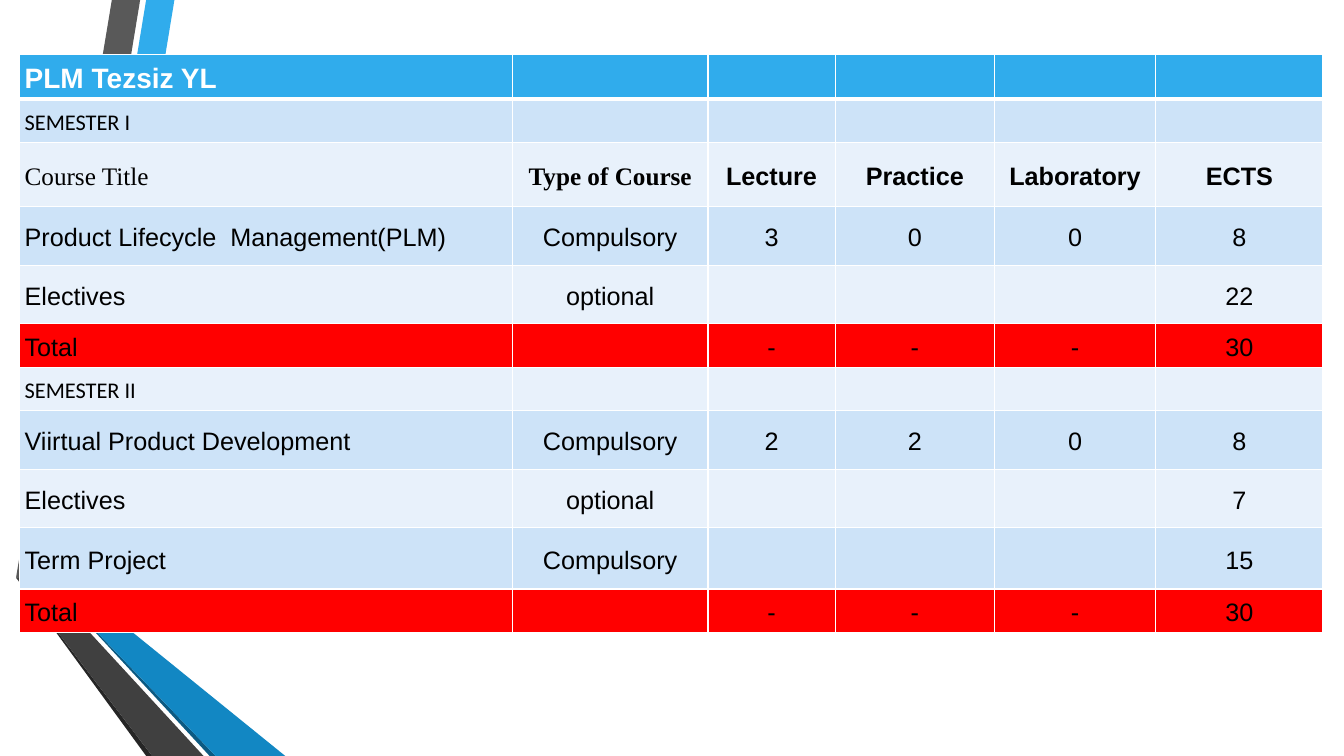
import pptx
import pptx.dml.color
import pptx.enum.text
import pptx.oxml
import pptx.oxml.ns
import pptx.util
from pptx.util import Pt

COLORS = {
    "sky": "30ACEC", "grey": "595959", "black": "000000", "navy": "0C5A82",
    "blue": "1287C3", "charcoal": "404040", "shadow": "262626",
    "band": "CDE3F8", "pale": "E8F1FB", "total": "FF0000", "white": "FFFFFF",
}

# Ribbon colour and outline corners in points
RIBBONS = [
    ("sky", [(36, 416.2), (55.4, 419.8), (124.6, 0), (104.4, 0)]),
    ("grey", [(100.1, 0), (79.9, 0), (11.5, 412.6), (31.7, 415.4)]),
    ("shadow", [(11.5, 412.6), (104.4, 540), (108.7, 540)]),
    ("navy", [(36, 416.9), (149.8, 540), (154.1, 540)]),
    ("blue", [(36, 416.9), (154.1, 540), (203.8, 540), (55.4, 419.8), (36, 416.2)]),
    ("charcoal", [(145.4, 540), (34.6, 419.8), (31, 416.2), (31.7, 415.4),
                  (11.5, 412.6), (108.7, 540)]),
]

COLUMN_WIDTHS = [352, 139.7, 90.9, 113.8, 115.2, 119.5]
ROW_HEIGHTS = {"header": 31.7, "semester": 31, "titles": 46.1,
               "course": 41.8, "project": 43.9, "total": 31}
ROWS = [
    ("header", ["PLM Tezsiz YL", "", "", "", "", ""]),
    ("semester", ["SEMESTER I", "", "", "", "", ""]),
    ("titles", ["Course Title", "Type of Course", "Lecture", "Practice",
                "Laboratory", "ECTS"]),
    ("course", ["Product Lifecycle  Management(PLM)", "Compulsory", "3", "0", "0", "8"]),
    ("course", ["Electives", "optional", "", "", "", "22"]),
    ("total", ["Total", "", "-", "-", "-", "30"]),
    ("semester", ["SEMESTER II", "", "", "", "", ""]),
    ("course", ["Viirtual Product Development", "Compulsory", "2", "2", "0", "8"]),
    ("course", ["Electives", "optional", "", "", "", "7"]),
    ("project", ["Term Project", "Compulsory", "", "", "", "15"]),
    ("total", ["Total", "", "-", "-", "-", "30"]),
]


def rgb(name):
    return pptx.dml.color.RGBColor.from_string(COLORS[name])


def add_ribbon(slide, color, corners):
    points = [(Pt(x), Pt(y)) for x, y in corners]
    builder = slide.shapes.build_freeform(*points[0])
    builder.add_line_segments(points[1:], close=True)
    shape = builder.convert_to_shape()
    shape.shadow.inherit = False
    shape.fill.solid()
    shape.fill.fore_color.rgb = rgb(color)
    shape.line.fill.background()


def set_borders(cell, top, bottom):
    properties = cell._tc.get_or_add_tcPr()
    for side, width in (("L", 1), ("R", 1), ("T", top), ("B", bottom)):
        properties.append(pptx.oxml.parse_xml(
            f'<a:ln{side} {pptx.oxml.ns.nsdecls("a")} w="{Pt(width)}">'
            f'<a:solidFill><a:srgbClr val="{COLORS["white"]}"/></a:solidFill>'
            f'</a:ln{side}>'))


def row_fill(kind, row):
    """Header and totals have their own colour; the rest alternate."""
    if kind == "header":
        return "sky"
    if kind == "total":
        return "total"
    return "band" if row % 2 else "pale"


def write_cell(cell, text, kind, column):
    cell.margin_left = cell.margin_right = Pt(3.6)
    cell.margin_top = cell.margin_bottom = 0
    cell.vertical_anchor = pptx.enum.text.MSO_ANCHOR.MIDDLE
    cell.text_frame.text = text
    paragraph = cell.text_frame.paragraphs[0]
    paragraph.line_spacing = 1.15
    if column:
        paragraph.alignment = pptx.enum.text.PP_ALIGN.CENTER
    for run in paragraph.runs:
        font = run.font
        font.size = Pt({"header": 20, "semester": 16}.get(kind, 18))
        font.bold = kind == "header" or (kind == "titles" and column > 0)
        font.color.rgb = rgb("white" if kind == "header" else "black")
        if kind == "semester":
            font.name = "Calibri"
        elif kind == "titles" and column < 2:
            font.name = "Times New Roman"
        else:
            font.name = "Arial"


def add_course_table(slide):
    heights = [ROW_HEIGHTS[kind] for kind, _ in ROWS]
    table = slide.shapes.add_table(
        len(ROWS), len(COLUMN_WIDTHS), Pt(14), Pt(39),
        Pt(sum(COLUMN_WIDTHS)), Pt(sum(heights))).table
    for column, width in enumerate(COLUMN_WIDTHS):
        table.columns[column].width = Pt(width)
    for row, (kind, texts) in enumerate(ROWS):
        table.rows[row].height = Pt(heights[row])
        for column, text in enumerate(texts):
            cell = table.cell(row, column)
            set_borders(cell, top=3 if row == 1 else 1, bottom=3 if row == 0 else 1)
            cell.fill.solid()
            cell.fill.fore_color.rgb = rgb(row_fill(kind, row))
            write_cell(cell, text, kind, column)


def main():
    presentation = pptx.Presentation()
    presentation.slide_width = Pt(960)
    presentation.slide_height = Pt(540)
    slide = presentation.slides.add_slide(presentation.slide_layouts[6])
    for color, corners in RIBBONS:
        add_ribbon(slide, color, corners)
    add_course_table(slide)
    presentation.save("out.pptx")


if __name__ == "__main__":
    main()
